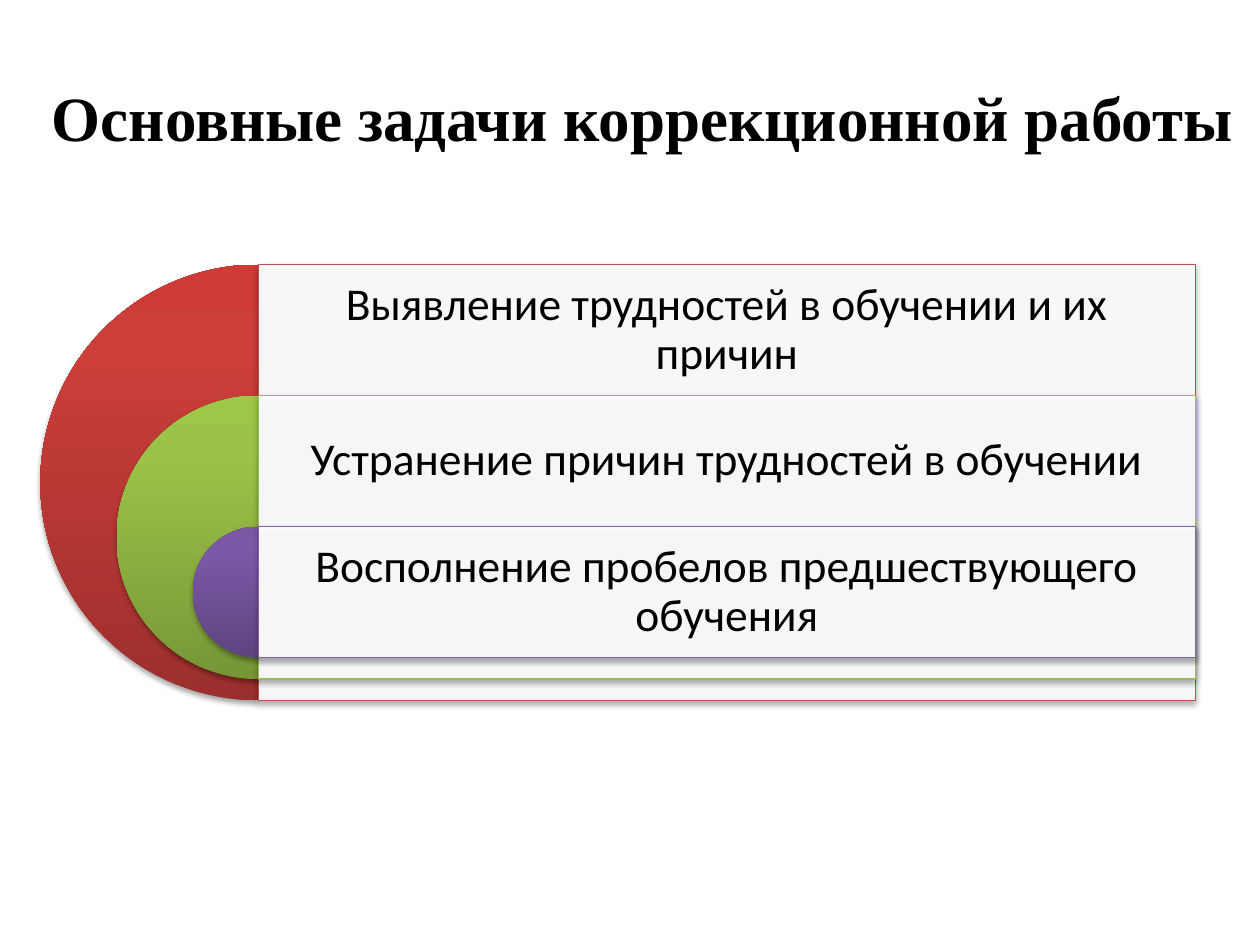
from copy import deepcopy
from dataclasses import dataclass

from lxml import etree
from pptx import Presentation
from pptx.dml.color import RGBColor
from pptx.enum.shapes import MSO_SHAPE
from pptx.enum.text import MSO_ANCHOR, PP_ALIGN
from pptx.oxml.ns import qn
from pptx.shapes.autoshape import Shape
from pptx.slide import Slide
from pptx.util import Inches, Pt

PIE, RECT = MSO_SHAPE.PIE, MSO_SHAPE.RECTANGLE
MIDDLE, CENTER = MSO_ANCHOR.MIDDLE, PP_ALIGN.CENTER


@dataclass(frozen=True)
class Theme:
    text: str = "000000"
    panel: str = "FFFFFF"
    title_font: str = "Times New Roman"
    body_font: str = "Calibri"
    title_size: int = 36
    body_size: int = 26
    panel_opacity: int = 90
    shadow_opacity: int = 35


@dataclass(frozen=True)
class Task:
    text: str
    line: str
    gradient: tuple[str, str, str]


THEME = Theme()
TASKS = (
    Task("Выявление трудностей в обучении и их причин", "C0504D",
         ("9C2F2D", "CB3E3A", "CE3B37")),
    Task("Устранение причин трудностей в обучении", "9BBB59",
         ("779737", "9BC348", "9DC746")),
    Task("Восполнение пробелов предшествующего обучения", "8064A2",
         ("5F4480", "7B58A6", "7C57A8")),
)
STOPS = (0, 0.8, 1)
AXIS, TOP, PANEL_W = 2.05, 2.1, 7.44
ROW_H, RING_STEP = 1.04, 1.21


def set_alpha(color: etree._Element, percent: int) -> None:
    etree.SubElement(color, qn("a:alpha"), val=str(percent * 1000))


def add_shadow(shape: Shape) -> None:
    shape.shadow.inherit = False
    effects = shape._element.spPr.find(qn("a:effectLst"))
    shadow = etree.SubElement(
        effects, qn("a:outerShdw"), blurRad=str(Pt(3.1)), dist=str(Pt(1.8)),
        dir="5400000", rotWithShape="0")
    color = etree.SubElement(shadow, qn("a:srgbClr"), val=THEME.text)
    set_alpha(color, THEME.shadow_opacity)


def add_half_disc(s: Slide, task: Task, top: float, size: float) -> None:
    sp = s.shapes.add_shape(PIE, Inches(AXIS - size / 2), Inches(top),
                            Inches(size), Inches(size))
    sp.adjustments[0], sp.adjustments[1] = 54, 162
    sp.line.fill.background()
    sp.fill.gradient()
    sp.fill.gradient_angle = 90
    stop_list = sp._element.spPr.find(".//" + qn("a:gsLst"))
    stop_list.append(deepcopy(stop_list[0]))
    for stop, position, color in zip(sp.fill.gradient_stops, STOPS, task.gradient):
        stop.position = position
        stop.color.rgb = RGBColor.from_string(color)
    add_shadow(sp)


def add_panel(s: Slide, task: Task, top: float, height: float) -> None:
    sp = s.shapes.add_shape(RECT, Inches(AXIS), Inches(top),
                            Inches(PANEL_W), Inches(height))
    sp.fill.solid()
    sp.fill.fore_color.rgb = RGBColor.from_string(THEME.panel)
    set_alpha(sp._element.spPr.find(qn("a:solidFill"))[0], THEME.panel_opacity)
    sp.line.color.rgb = RGBColor.from_string(task.line)
    sp.line.width = Pt(0.75)
    add_shadow(sp)


def add_text(s: Slide, text: str, box: tuple[float, float, float, float],
             font: dict, frame: dict, paragraph: dict) -> None:
    tf = s.shapes.add_textbox(*map(Inches, box)).text_frame
    p = tf.paragraphs[0]
    r = p.add_run()
    r.text = text
    r.font.color.rgb = RGBColor.from_string(THEME.text)
    frame = {"word_wrap": True, "vertical_anchor": MIDDLE, **frame}
    paragraph = {"alignment": CENTER, **paragraph}
    for target, values in ((tf, frame), (p, paragraph), (r.font, font)):
        for name, value in values.items():
            setattr(target, name, value)


def main() -> None:
    prs = Presentation()
    prs.slide_width, prs.slide_height = Inches(10), Inches(7.5)
    s = prs.slides.add_slide(prs.slide_layouts[6])

    add_text(s, "Основные задачи коррекционной работы", (0.2, 0.3, 9.8, 1.25),
             {"name": THEME.title_font, "size": Pt(THEME.title_size), "bold": True},
             {}, {})

    body_font = {"name": THEME.body_font, "size": Pt(THEME.body_size)}
    margins = {f"margin_{side}": Inches(0.11)
               for side in ("left", "top", "right", "bottom")}
    spacing = {"line_spacing": 0.9, "space_after": Pt(9)}
    for i, task in enumerate(TASKS):
        top = TOP + i * ROW_H
        size = ROW_H + (len(TASKS) - 1 - i) * RING_STEP
        add_half_disc(s, task, top, size)
        add_panel(s, task, top, size)
        add_text(s, task.text, (AXIS, top, PANEL_W, ROW_H),
                 body_font, margins, spacing)

    prs.save("out.pptx")


if __name__ == "__main__":
    main()
